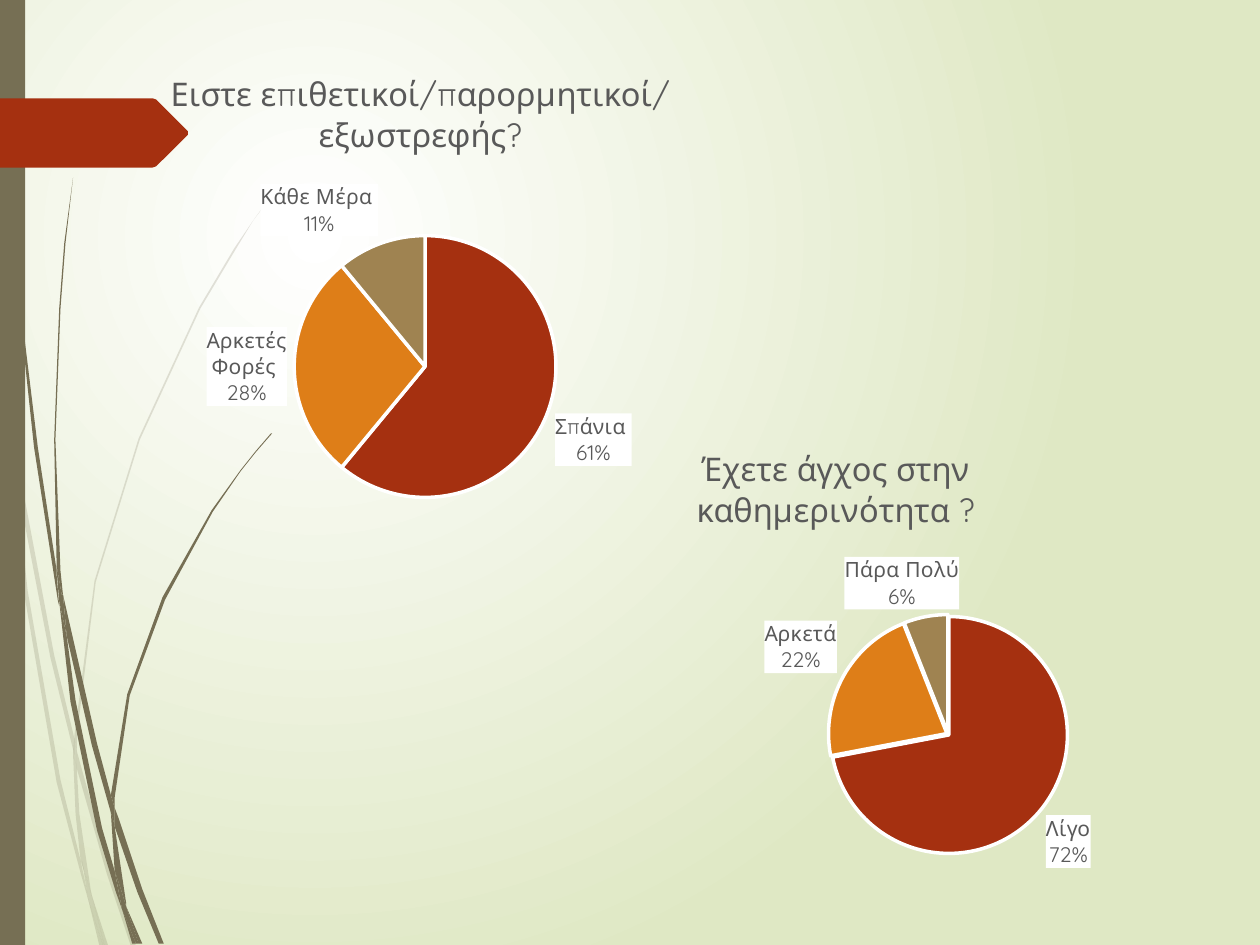
from copy import deepcopy

from lxml import etree
from pptx import Presentation
from pptx.chart.data import CategoryChartData
from pptx.dml.color import RGBColor
from pptx.enum.chart import XL_CHART_TYPE, XL_LABEL_POSITION
from pptx.enum.shapes import MSO_SHAPE
from pptx.oxml import parse_xml
from pptx.oxml.ns import nsdecls, qn
from pptx.util import Cm, Pt

FONT = "Quicksand"
COLORS = {
    "white": "FFFFFF", "pale_green": "DFE8C4", "stem": "766F54",
    "red": "A53010", "orange": "DE7E18", "tan": "9F8351", "text": "595959",
}
SLICE_COLORS = ("red", "orange", "tan")
GRID = 2.54  # outline coordinates are multiples of this many cm

PALE_GRASS = [
    [(0.08, 3.5), (0.06, 3.22), (0, 2.82), (0, 2.99), (0.07, 3.44)],
    [(0.4, 5.22), (0.59, 5.99), (0.59, 5.86), (0.43, 5.2), (0.1, 3.45), (0.12, 3.76)],
    [(0.64, 6.07), (0.61, 5.96), (0.61, 6.1), (0.85, 6.94), (1.04, 7.51),
     (1.08, 7.51), (0.88, 6.92)],
    [(0.83, 7.51), (0.86, 7.51), (0.73, 7.11)],
    [(0.64, 6.83), (0.48, 6.19), (0.22, 4.69), (0.12, 3.76), (0.08, 3.5),
     (0.19, 4.7), (0.45, 6.21), (0.64, 6.93), (0.7, 7.14), (0.69, 7.07)],
    [(0.58, 5.99), (0.6, 6.46), (0.64, 6.83), (0.67, 6.92), (0.73, 7.11),
     (0.72, 7.06), (0.63, 6.46), (0.61, 6.1), (0.61, 6.08)],
    [(0.61, 5.84), (0.76, 4.62), (1.11, 3.49), (1.59, 2.45), (1.87, 1.98),
     (2.01, 1.75), (2.17, 1.54), (2.17, 1.53), (2.01, 1.75), (1.86, 1.97),
     (1.58, 2.44), (1.1, 3.48), (0.75, 4.61), (0.59, 5.84), (0.59, 5.86), (0.61, 5.96)],
    [(0.7, 7.14), (0.79, 7.51), (0.82, 7.51)],
    [(0.61, 6.08), (0.61, 6.1), (0.61, 5.96), (0.59, 5.86), (0.58, 5.99)],
    [(0.67, 6.92), (0.65, 6.83), (0.69, 7.07), (0.7, 7.14), (0.82, 7.51),
     (0.83, 7.51), (0.73, 7.11)],
]
DARK_GRASS = [
    [(0.05, 1.1), (0.14, 2.33), (0.27, 3.55), (0.46, 4.77), (0.47, 4.81),
     (0.45, 4.57), (0.45, 4.53), (0.3, 3.55), (0.15, 2.32), (0.06, 1.09),
     (0.04, 0.48), (0.03, 0), (0.02, 0), (0.03, 0.48)],
    [(0.73, 5.92), (0.88, 6.45), (0.88, 6.33), (0.88, 6.31), (0.77, 5.9),
     (0.5, 4.72), (0.53, 5.05)],
    [(0.94, 6.49), (0.91, 6.41), (0.91, 6.56), (1.09, 7.08), (1.26, 7.49),
     (1.3, 7.49), (1.13, 7.06)],
    [(0.91, 6.91), (0.81, 6.57), (0.6, 5.56), (0.53, 5.05), (0.47, 4.77),
     (0.56, 5.57), (0.77, 6.59), (0.92, 7.08), (0.97, 7.22), (0.96, 7.17)],
    [(0.5, 4.72), (0.48, 4.53), (0.44, 3.49), (0.48, 2.45), (0.52, 1.93),
     (0.58, 1.41), (0.51, 1.93), (0.47, 2.45), (0.43, 3.49), (0.45, 4.49), (0.49, 4.72)],
    [(1.1, 7.49), (1.13, 7.49), (1, 7.19)],
    [(0.47, 4.77), (0.53, 5.05), (0.5, 4.72), (0.49, 4.72), (0.45, 4.49), (0.45, 4.53)],
    [(0.91, 6.33), (1.03, 5.52), (1.31, 4.76), (1.69, 4.06), (1.91, 3.74),
     (2.03, 3.59), (2.16, 3.44), (2.15, 3.44), (2.03, 3.58), (1.91, 3.73),
     (1.68, 4.05), (1.29, 4.74), (1.01, 5.51), (0.88, 6.31), (0.91, 6.41)],
    [(0.97, 7.22), (1.05, 7.49), (1.08, 7.49)],
    [(0.88, 6.45), (0.91, 6.91), (0.96, 7.06), (1, 7.19), (1, 7.16), (0.91, 6.56),
     (0.9, 6.51)],
    [(0.88, 6.45), (0.9, 6.51), (0.91, 6.56), (0.91, 6.41), (0.88, 6.31), (0.88, 6.33)],
    [(0.96, 7.06), (0.91, 6.91), (0.96, 7.17), (0.97, 7.22), (1.08, 7.49),
     (1.1, 7.49), (1, 7.19)],
]
ARROW = [(1.49, 1.07), (1.24, 1.32), (1.21, 1.33), (0, 1.33), (0, 0.78),
         (1.21, 0.78), (1.24, 0.79), (1.49, 1.04)]


def rgb(name):
    return RGBColor.from_string(COLORS[name])


def paint(shape, color):
    shape.shadow.inherit = False
    shape.fill.solid()
    shape.fill.fore_color.rgb = rgb(color)
    shape.line.fill.background()


def set_background(slide):
    fill = slide.background.fill
    fill.gradient()
    for stop, color in zip(fill.gradient_stops, ("white", "pale_green")):
        stop.color.rgb = rgb(color)
    linear = slide.background._cSld.find(".//" + qn("a:lin"))
    linear.getparent().replace(linear, parse_xml(
        f'<a:path {nsdecls("a")} path="circle">'
        '<a:fillToRect l="50000" t="50000" r="100000" b="100000"/></a:path>'))


def add_outline(shapes, points, color):
    vertices = [(Cm(x * GRID), Cm(y * GRID)) for x, y in points]
    builder = shapes.build_freeform(*vertices[0])
    builder.add_line_segments(vertices[1:], close=True)
    shape = builder.convert_to_shape()
    paint(shape, color)
    return shape


def add_grass(slide, outlines, opacity=100):
    group = slide.shapes.add_group_shape()
    for points in outlines:
        blade = add_outline(group.shapes, points, "stem")
        if opacity < 100:
            color = blade._element.spPr.find(qn("a:solidFill"))[0]
            etree.SubElement(color, qn("a:alpha")).set("val", str(opacity * 1000))


def set_layout(element, before, x, y, width=None, height=None):
    sizes = target = ""
    if width:
        sizes = f'<c:w val="{width}"/><c:h val="{height}"/>'
        target = '<c:layoutTarget val="inner"/>'
    for old in element.findall(qn("c:layout")):
        element.remove(old)
    element.find(qn(before)).addprevious(parse_xml(
        f'<c:layout {nsdecls("c")}><c:manualLayout>{target}'
        '<c:xMode val="edge"/><c:yMode val="edge"/>'
        f'<c:x val="{x}"/><c:y val="{y}"/>{sizes}</c:manualLayout></c:layout>'))


def style_font(font, size):
    font.name = FONT
    font.size = Pt(size)
    font.bold = False
    font.color.rgb = rgb("text")


def style_labels(labels):
    labels.show_category_name = True
    labels.show_percentage = True
    labels.show_value = False
    labels.number_format = "0%"
    labels.number_format_is_linked = False
    labels.position = XL_LABEL_POSITION.OUTSIDE_END
    style_font(labels.font, 12)
    labels._element.find(qn("c:txPr")).addprevious(parse_xml(
        f'<c:spPr {nsdecls("c", "a")}><a:solidFill>'
        f'<a:srgbClr val="{COLORS["white"]}"/></a:solidFill></c:spPr>'))


def shift_label(labels, index, x):
    """Move one label sideways by a share of the chart's width."""
    label = parse_xml(
        f'<c:dLbl {nsdecls("c")}><c:idx val="{index}"/><c:layout><c:manualLayout>'
        f'<c:x val="{x}"/><c:y val="0"/></c:manualLayout></c:layout></c:dLbl>')
    for child in labels._element:
        if child.tag != qn("c:showLeaderLines"):
            label.append(deepcopy(child))
    labels._element.insert(0, label)


def add_pie(slide, box, title_text, slices, title_at, pie_box):
    data = CategoryChartData(number_format="General")
    data.categories = list(slices)
    data.add_series(title_text.replace("\v", " "), list(slices.values()))
    chart = slide.shapes.add_chart(
        XL_CHART_TYPE.PIE, *(Cm(length) for length in box), data).chart
    chart.has_legend = False
    chart.font.name = FONT
    chart.font.size = Pt(10)

    title = chart.chart_title
    paragraph = title.text_frame.paragraphs[0]
    paragraph.text = title_text
    style_font(paragraph.font, 18.6)
    set_layout(title._element, "c:overlay", *title_at)

    plot = chart.plots[0]
    plot.vary_by_categories = True
    set_layout(plot._element.getparent(), "c:pieChart", *pie_box)
    series = plot.series[0]
    for index, color in enumerate(SLICE_COLORS):
        slice_format = series.points[index].format
        slice_format.fill.solid()
        slice_format.fill.fore_color.rgb = rgb(color)
        slice_format.line.color.rgb = rgb("white")
        slice_format.line.width = Pt(2)
    style_labels(series.data_labels)
    return series


def main():
    presentation = Presentation()
    presentation.slide_width = Cm(25.4)
    presentation.slide_height = Cm(19.05)
    slide = presentation.slides.add_slide(presentation.slide_layouts[6])
    set_background(slide)

    add_grass(slide, PALE_GRASS, opacity=20)
    add_grass(slide, DARK_GRASS)
    side_bar = slide.shapes.add_shape(
        MSO_SHAPE.RECTANGLE, 0, 0, Cm(0.51), presentation.slide_height)
    paint(side_bar, "stem")
    add_outline(slide.shapes, ARROW, "red")

    add_pie(slide, (1.5, 0.91, 14, 9.6),
            "Ειστε επιθετικοί/παρορμητικοί/ εξωστρεφής?",
            {"Σπάνια ": 61, "Αρκετές Φορές ": 28, "Κάθε Μέρα ": 11},
            (0.13, 0.04), (0.31, 0.4, 0.39, 0.55))
    stress = add_pie(slide, (11.71, 8.53, 14.1, 9.65),
                     "Έχετε άγχος στην\vκαθημερινότητα ?",
                     {"Λίγο": 72, "Αρκετά": 22, "Πάρα Πολύ": 6},
                     (0.16, 0.04), (0.35, 0.4, 0.35, 0.5))
    stress._element.find(qn("c:dPt")).addprevious(
        parse_xml(f'<c:explosion {nsdecls("c")} val="1"/>'))
    shift_label(stress.data_labels, 2, 0.05)
    presentation.save("out.pptx")


if __name__ == "__main__":
    main()
